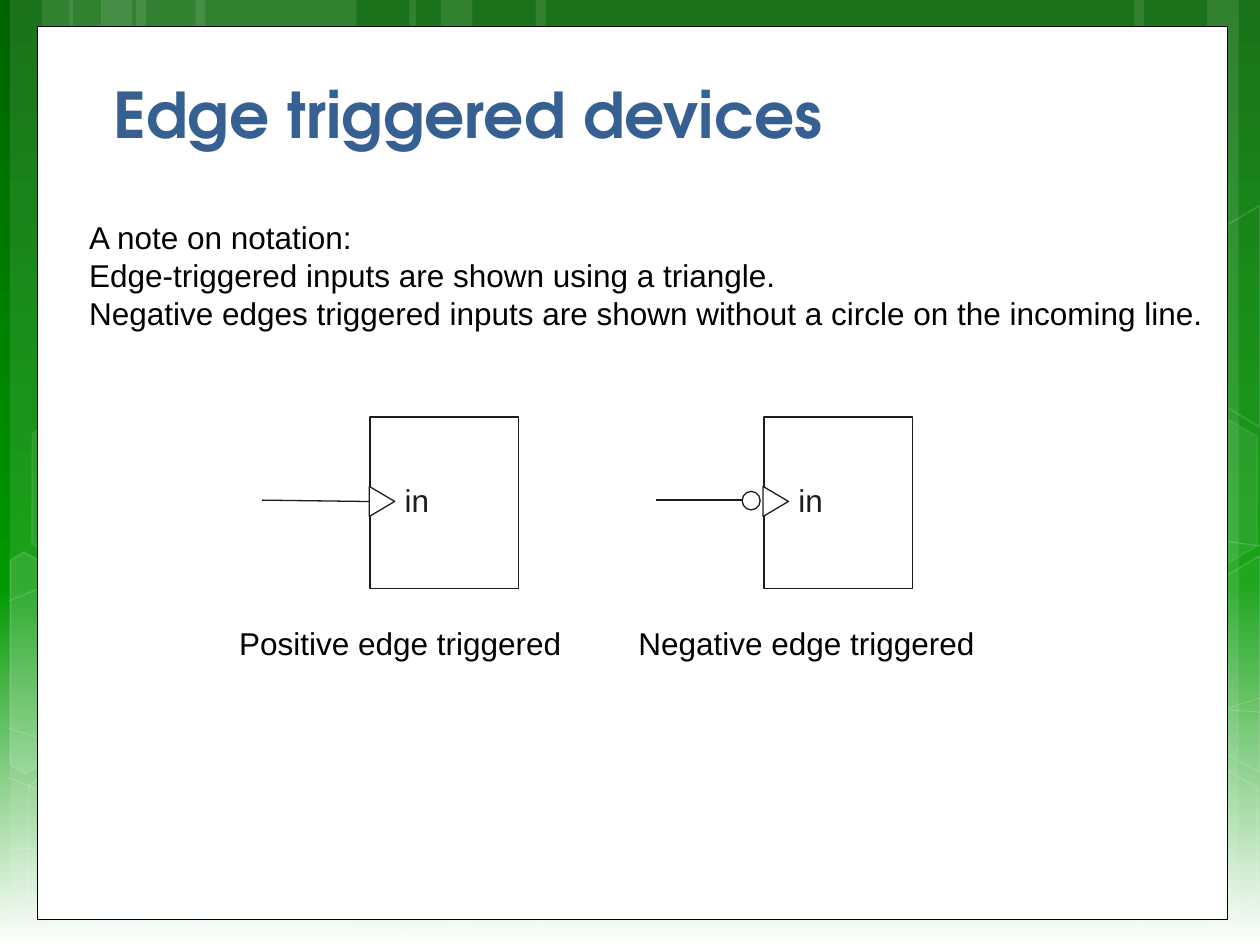
from copy import deepcopy
from lxml.etree import SubElement
from pptx import Presentation
from pptx.dml.color import RGBColor
from pptx.enum.shapes import MSO_CONNECTOR, MSO_SHAPE
from pptx.enum.text import MSO_ANCHOR, MSO_AUTO_SIZE, PP_ALIGN
from pptx.oxml.ns import qn
from pptx.util import Pt

HUES = {"dark": "006400", "green": "009900", "white": "FFFFFF",
        "black": "000000", "ink": "1C1C1C", "blue": "376092"}
STOPS = [("dark", 0), ("green", 0.62), ("white", 1)]
TITLE = "Edge triggered devices"
NOTES = ["A note on notation:",
         "Edge-triggered inputs are shown using a triangle.",
         "Negative edges triggered inputs are shown without a circle on the incoming line."]
GATES = [
    {"left": 211.5, "label": "Positive edge triggered", "at": 129.6, "wide": 205.2,
     "wire": (149.8, 285.8, 211, 286.6), "ring": False},
    {"left": 436.5, "label": "Negative edge triggered", "at": 357.8, "wide": 213.1,
     "wire": (375.1, 285.8, 430.6, 285.8), "ring": True},
]
BANDS = [(77.8, 126), (5.8, 36), (23.8, 59.8), (111.6, 126), (39.6, 36), (57.6, 59.8),
         (527.8, 126), (689.8, 30.2), (648, 59.8), (306, 221.8), (234, 36), (252, 59.8)]
CURVES = [
    [(5, 484.6), (136.8, 488.2), (329.8, 478.8), (570.2, 444.2), (720, 399)],
    [(5, 343.4), (87.1, 310.3), (249.8, 278.6), (470.9, 278.6), (720, 312)],
    [(4.3, 444.2), (240.5, 539.3)],
    [(5, 416.2), (92.2, 443.5), (257, 484.6), (452.2, 517), (614.2, 529.9), (720, 528.6)],
    [(174.2, 539.3), (279.4, 460.1), (437.8, 416.2), (571.7, 404.6), (686.2, 404.6), (720, 407)],
]
HEXES = [(7.9, 425.5, 0, 12), (10.1, 224.6, 7, 8), (600.5, 427, 0, 12), (600.5, 226.1, 7, 8)]
SHARDS = [
    ([(5.8, 320.4), (13.7, 315.4), (69.1, 347), (68.4, 410.4), (14.4, 442.1), (5.8, 437)], 10),
    ([(666.7, 349.2), (720, 317.5), (720, 441.4), (666.7, 412.6)], 4),
    ([(666.7, 149), (720, 117.4), (720, 244.1), (666.7, 212.4)], 0),
]

deck = Presentation()
deck.slide_width, deck.slide_height = Pt(720), Pt(540)
slide = deck.slides.add_slide(deck.slide_layouts[5])
shapes = slide.shapes


def hue(name):
    return RGBColor.from_string(HUES[name])


def fade(root, value):
    for node in root.iter(qn("a:srgbClr")):
        SubElement(node, qn("a:alpha")).set("val", str(value * 1000))


def paint(shape, fill=None, line=None, thick=0.75, veil=100, edge=100):
    shape.shadow.inherit = False
    if fill and veil:
        shape.fill.solid()
        shape.fill.fore_color.rgb = hue(fill)
        if veil < 100:
            fade(shape.element.spPr, veil)
    else:
        shape.fill.background()
    if line:
        shape.line.color.rgb = hue(line)
        shape.line.width = Pt(thick)
        if edge < 100:
            fade(shape.element.spPr.find(qn("a:ln")), edge)
    else:
        shape.line.fill.background()


def draw(kind, left, top, width, height, **style):
    shape = shapes.add_shape(kind, Pt(left), Pt(top), Pt(width), Pt(height))
    paint(shape, **style)
    return shape


def trace(points, close, **style):
    spots = [(Pt(x), Pt(y)) for x, y in points]
    pen = shapes.build_freeform(*spots[0])
    pen.add_line_segments(spots[1:], close=close)
    paint(pen.convert_to_shape(), **style)


def fill_text(frame, lines, size, font, name, bold=False):
    for i, line in enumerate(lines):
        para = frame.paragraphs[0] if i == 0 else frame.add_paragraph()
        para.alignment = PP_ALIGN.LEFT
        run = para.add_run()
        run.text = line
        run.font.size, run.font.name, run.font.bold = Pt(size), font, bold
        run.font.color.rgb = hue(name)


def write(lines, left, top, width, height, name="black", wrap=False):
    frame = shapes.add_textbox(Pt(left), Pt(top), Pt(width), Pt(height)).text_frame
    frame.word_wrap = wrap
    frame.auto_size = MSO_AUTO_SIZE.SHAPE_TO_FIT_TEXT
    fill_text(frame, lines, 18, "Arial", name)


back = slide.background.fill
back.gradient()
back.gradient_angle = 270
ramp = next(slide.element.iter(qn("a:gsLst")))
ramp.append(deepcopy(ramp[0]))
for stop, (name, place) in zip(back.gradient_stops, STOPS):
    stop.color.rgb = hue(name)
    stop.position = place

for left, width in BANDS:
    draw(MSO_SHAPE.RECTANGLE, left, 0, width, 540, fill="white", veil=10)
for points in CURVES:
    trace(points, False, line="white", thick=0.5, edge=20)
for left, top, veil, edge in HEXES:
    cell = draw(MSO_SHAPE.HEXAGON, left, top, 126, 109.4,
                fill="white", veil=veil, line="white", thick=1, edge=edge)
    cell.adjustments[0] = 0.285
    cell.rotation = 30
for points, veil in SHARDS:
    trace(points, True, fill="white", veil=veil, line="white", thick=1, edge=12)
draw(MSO_SHAPE.RECTANGLE, 21.6, 15.1, 679.7, 510.5, fill="white", line="black", thick=0.5)

title = shapes.title
shapes.element.append(title.element)
title.left, title.top, title.width, title.height = Pt(57.6), Pt(35.3), Pt(606.2), Pt(54.7)
title.text_frame.vertical_anchor = MSO_ANCHOR.BOTTOM
fill_text(title.text_frame, [TITLE], 36, "TeX Gyre Adventor", "blue", True)
write(NOTES, 43.9, 121, 657.4, 72.7, wrap=True)

for gate in GATES:
    left = gate["left"]
    wire = shapes.add_connector(MSO_CONNECTOR.STRAIGHT, *map(Pt, gate["wire"]))
    wire.line.color.rgb = hue("ink")
    wire.line.width = Pt(0.75)
    SubElement(wire.element.spPr, qn("a:effectLst"))
    draw(MSO_SHAPE.RECTANGLE, left, 238.3, 85, 97.9, line="ink")
    write(["in"], left + 12.6, 271.4, 28.8, 28.8, "ink")
    if gate["ring"]:
        draw(MSO_SHAPE.OVAL, left - 12.4, 280.8, 10.3, 10.6, fill="white", line="ink")
    wedge = draw(MSO_SHAPE.ISOSCELES_TRIANGLE, left - 1.8, 279.3, 17.2, 14.5,
                 fill="white", line="ink")
    wedge.rotation = 90
    write([gate["label"]], gate["at"], 352.8, gate["wide"], 28.8)

deck.save("out.pptx")
